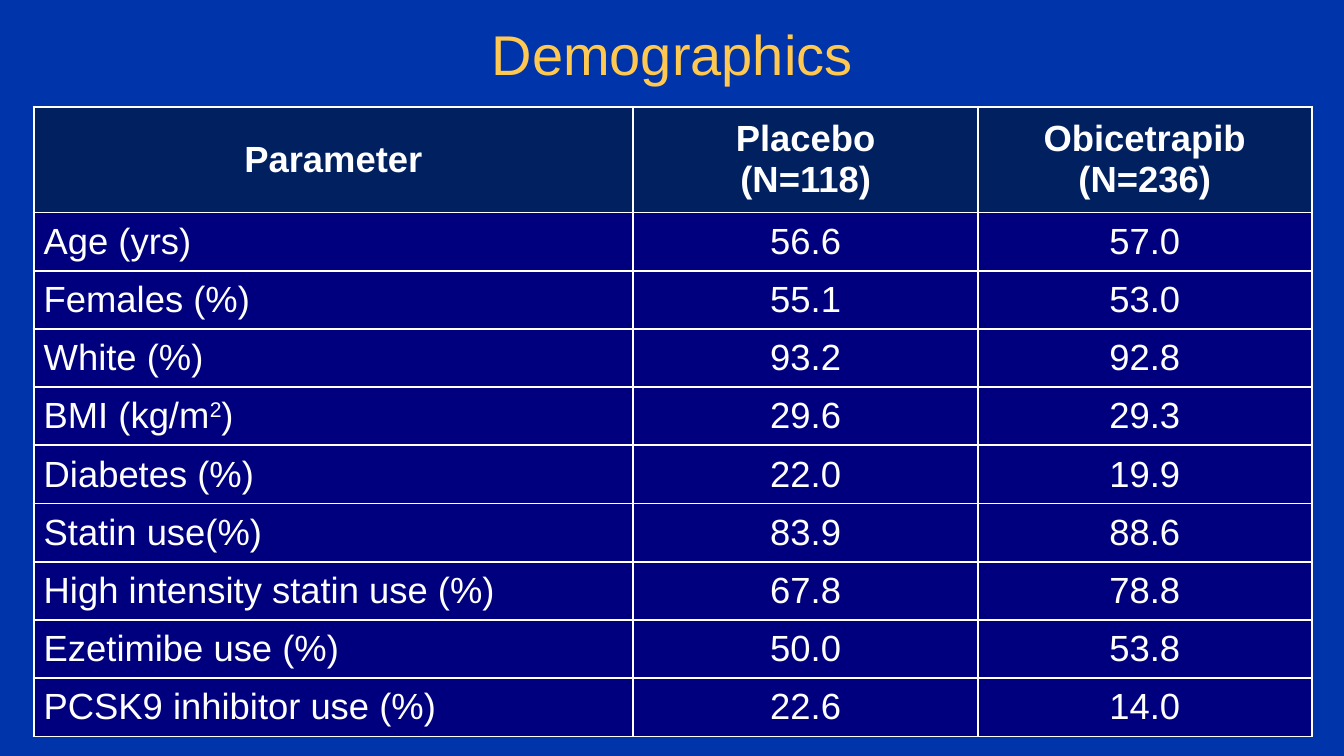
from dataclasses import dataclass

from lxml.etree import SubElement
from pptx import Presentation
from pptx.dml.color import RGBColor
from pptx.enum.text import MSO_ANCHOR as Anchor, PP_ALIGN as Align
from pptx.oxml.ns import qn
from pptx.slide import Slide
from pptx.table import Table, _Cell as Cell
from pptx.text.text import TextFrame
from pptx.util import Pt

FONT = "Arial"
WHITE = "FFFFFF"
GOLD = "FFC850"
BACKGROUND = "0034AA"
HEADER_FILL = "002060"
BODY_FILL = "00007F"
BORDER_WIDTH = 1.5
HEADER_HEIGHT = 75.6
ROW_HEIGHT = 41.6
COLUMN_WIDTHS = (428.4, 246.2, 238.3)
SUPERSCRIPT_MARK = "^"


@dataclass(frozen=True)
class Measure:
    parameter: str
    placebo: str
    obicetrapib: str


@dataclass(frozen=True)
class TextStyle:
    size: float
    color: str
    bold: bool = False
    align: Align = Align.CENTER


HEADER = Measure("Parameter", "Placebo\n(N=118)", "Obicetrapib\n(N=236)")
MEASURES = (
    Measure("Age (yrs)", "56.6", "57.0"),
    Measure("Females (%)", "55.1", "53.0"),
    Measure("White (%)", "93.2", "92.8"),
    Measure("BMI (kg/m^2^)", "29.6", "29.3"),
    Measure("Diabetes (%)", "22.0", "19.9"),
    Measure("Statin use(%)", "83.9", "88.6"),
    Measure("High intensity statin use (%)", "67.8", "78.8"),
    Measure("Ezetimibe use (%)", "50.0", "53.8"),
    Measure("PCSK9 inhibitor use (%)", "22.6", "14.0"),
)
TITLE_STYLE = TextStyle(40, GOLD)
HEADER_STYLE = TextStyle(26, WHITE, bold=True)
LABEL_STYLE = TextStyle(26, WHITE, align=Align.LEFT)
VALUE_STYLE = TextStyle(26, WHITE)


def rgb(color: str) -> RGBColor:
    return RGBColor.from_string(color)


def write_text(frame: TextFrame, text: str, style: TextStyle) -> None:
    for index, line in enumerate(text.split("\n")):
        para = frame.add_paragraph() if index else frame.paragraphs[0]
        para.alignment = style.align
        for position, piece in enumerate(line.split(SUPERSCRIPT_MARK)):
            span = para.add_run()
            span.text = piece
            span.font.name = FONT
            span.font.size = Pt(style.size)
            span.font.bold = style.bold
            span.font.color.rgb = rgb(style.color)
            if position % 2:
                span.font._element.set("baseline", "30000")


def add_borders(cell: Cell) -> None:
    properties = cell._tc.get_or_add_tcPr()
    for side in ("lnL", "lnR", "lnT", "lnB"):
        line = SubElement(properties, qn(f"a:{side}"), w=str(Pt(BORDER_WIDTH)))
        fill = SubElement(line, qn("a:solidFill"))
        SubElement(fill, qn("a:srgbClr"), val=WHITE)


def fill_row(table: Table, row: int, measure: Measure, fill: str,
             label_style: TextStyle, value_style: TextStyle) -> None:
    texts = (measure.parameter, measure.placebo, measure.obicetrapib)
    for column, text in enumerate(texts):
        cell = table.cell(row, column)
        add_borders(cell)
        cell.fill.solid()
        cell.fill.fore_color.rgb = rgb(fill)
        cell.vertical_anchor = Anchor.MIDDLE
        write_text(cell.text_frame, text, value_style if column else label_style)


def add_title(page: Slide, text: str) -> None:
    box = page.shapes.add_textbox(Pt(72), Pt(6.5), Pt(816), Pt(63.4))
    box.text_frame.word_wrap = True
    box.text_frame.vertical_anchor = Anchor.MIDDLE
    write_text(box.text_frame, text, TITLE_STYLE)


def add_demographics(page: Slide) -> None:
    height = HEADER_HEIGHT + ROW_HEIGHT * len(MEASURES)
    table = page.shapes.add_table(
        len(MEASURES) + 1, len(COLUMN_WIDTHS),
        Pt(24), Pt(76.2), Pt(sum(COLUMN_WIDTHS)), Pt(height),
    ).table
    for column, width in zip(table.columns, COLUMN_WIDTHS):
        column.width = Pt(width)
    for index, row in enumerate(table.rows):
        row.height = Pt(ROW_HEIGHT if index else HEADER_HEIGHT)
    fill_row(table, 0, HEADER, HEADER_FILL, HEADER_STYLE, HEADER_STYLE)
    for index, measure in enumerate(MEASURES, start=1):
        fill_row(table, index, measure, BODY_FILL, LABEL_STYLE, VALUE_STYLE)


def main() -> None:
    deck = Presentation()
    deck.slide_width, deck.slide_height = Pt(960), Pt(540)
    page = deck.slides.add_slide(deck.slide_layouts[6])
    page.background.fill.solid()
    page.background.fill.fore_color.rgb = rgb(BACKGROUND)
    add_title(page, "Demographics")
    add_demographics(page)
    deck.save("out.pptx")


if __name__ == "__main__":
    main()
